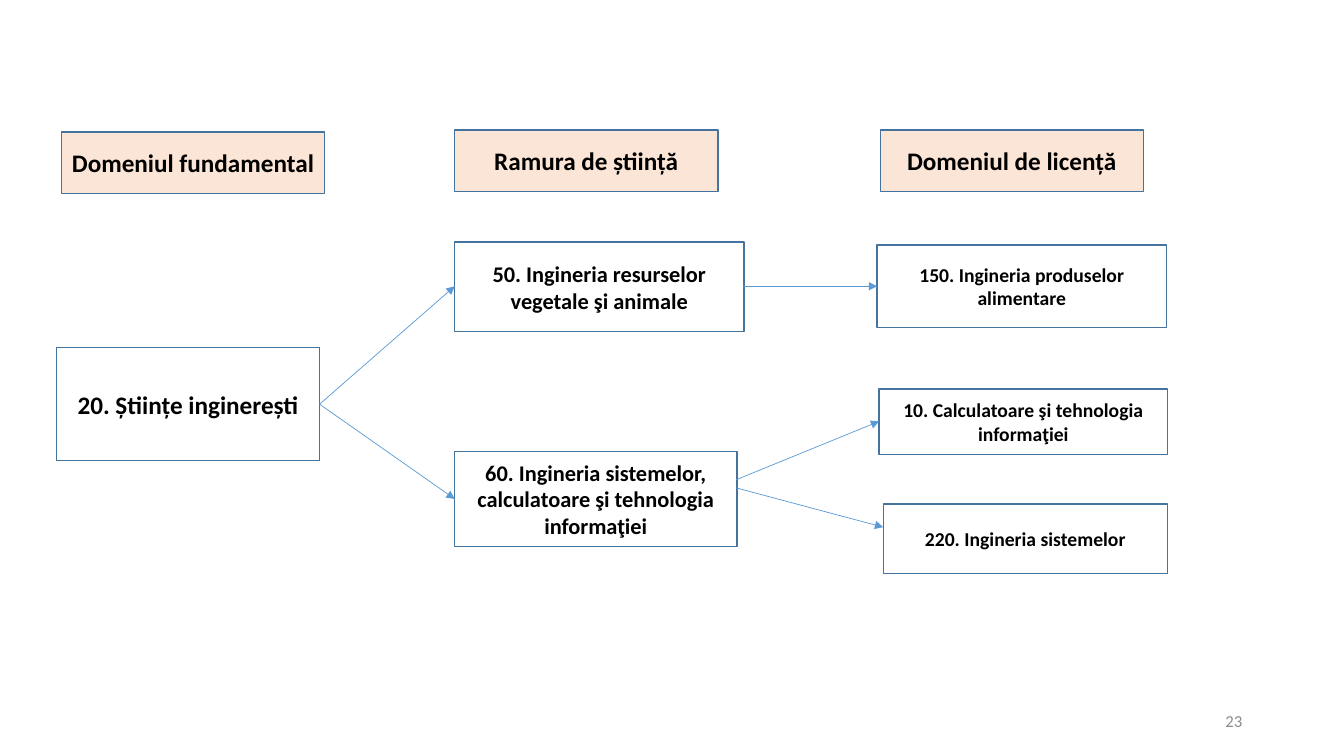
from lxml import etree
from pptx import Presentation
from pptx.dml.color import RGBColor
from pptx.enum.shapes import MSO_CONNECTOR, MSO_SHAPE
from pptx.enum.text import MSO_ANCHOR, PP_ALIGN
from pptx.oxml.ns import qn
from pptx.util import Inches, Pt

RECTANGLE = MSO_SHAPE.RECTANGLE
STRAIGHT = MSO_CONNECTOR.STRAIGHT
MIDDLE = MSO_ANCHOR.MIDDLE
CENTER = PP_ALIGN.CENTER
RIGHT = PP_ALIGN.RIGHT

BLACK = RGBColor(0x00, 0x00, 0x00)
GRAY = RGBColor(0x8C, 0x8C, 0x8C)
PEACH = RGBColor(0xFB, 0xE5, 0xD6)
BORDER = RGBColor(0x43, 0x73, 0x9E)
ARROW = RGBColor(0x5B, 0x9B, 0xD5)

HEADINGS = [
    ("Domeniul fundamental", 0.61, 1.31),
    ("Ramura de știință", 4.51, 1.29),
    ("Domeniul de licență", 8.73, 1.29),
]
DOMAINS = [
    ("20. Științe inginerești", (0.56, 3.45, 2.61, 1.12), 18),
    ("50. Ingineria resurselor vegetale şi animale", (4.51, 2.4, 2.87, 0.89), 16),
    ("60. Ingineria sistemelor, calculatoare şi tehnologia informaţiei",
     (4.51, 4.48, 2.8, 0.94), 16),
    ("150. Ingineria produselor alimentare", (8.7, 2.43, 2.87, 0.82), 14),
    ("10. Calculatoare şi tehnologia informaţiei", (8.72, 3.86, 2.86, 0.65), 14),
    ("220. Ingineria sistemelor", (8.76, 5, 2.82, 0.69), 14),
]
ARROWS = [
    ((3.17, 4.01), (4.51, 2.84)),
    ((3.17, 4.01), (4.51, 4.95)),
    ((7.37, 2.84), (8.7, 2.84)),
    ((7.3, 4.76), (8.72, 4.18)),
    ((7.3, 4.84), (8.76, 5.23)),
]


def write_text(frame, text, size, color=BLACK, bold=False, align=CENTER):
    frame.word_wrap = True
    frame.vertical_anchor = MIDDLE
    paragraph = frame.paragraphs[0]
    paragraph.alignment = align
    run = paragraph.add_run()
    run.text = text
    run.font.name = "Calibri"
    run.font.size = Pt(size)
    run.font.bold = bold
    run.font.color.rgb = color


class Diagram:
    def __init__(self, slide):
        self.slide = slide

    def box(self, text, bounds, size, fill=None):
        shape = self.slide.shapes.add_shape(RECTANGLE, *map(Inches, bounds))
        shape.shadow.inherit = False
        if fill is None:
            shape.fill.background()
        else:
            shape.fill.solid()
            shape.fill.fore_color.rgb = fill
        shape.line.color.rgb = BORDER
        shape.line.width = Pt(1)
        write_text(shape.text_frame, text, size, bold=True)

    def arrow(self, start, end):
        connector = self.slide.shapes.add_connector(STRAIGHT, *map(Inches, start + end))
        connector.line.color.rgb = ARROW
        connector.line.width = Pt(0.5)
        properties = connector._element.spPr
        etree.SubElement(properties.find(qn("a:ln")), qn("a:tailEnd"), type="triangle")
        etree.SubElement(properties, qn("a:effectLst"))

    def label(self, text, bounds, size, color, align):
        shape = self.slide.shapes.add_textbox(*map(Inches, bounds))
        write_text(shape.text_frame, text, size, color=color, align=align)


def main():
    presentation = Presentation()
    presentation.slide_width = Inches(13.33)
    presentation.slide_height = Inches(7.5)
    diagram = Diagram(presentation.slides.add_slide(presentation.slide_layouts[6]))
    diagram.label("23", (9.42, 6.95, 3, 0.4), 12, GRAY, RIGHT)
    for text, left, top in HEADINGS:
        diagram.box(text, (left, top, 2.61, 0.61), 18, fill=PEACH)
    for text, bounds, size in DOMAINS:
        diagram.box(text, bounds, size)
    for start, end in ARROWS:
        diagram.arrow(start, end)
    presentation.save("out.pptx")


if __name__ == "__main__":
    main()
